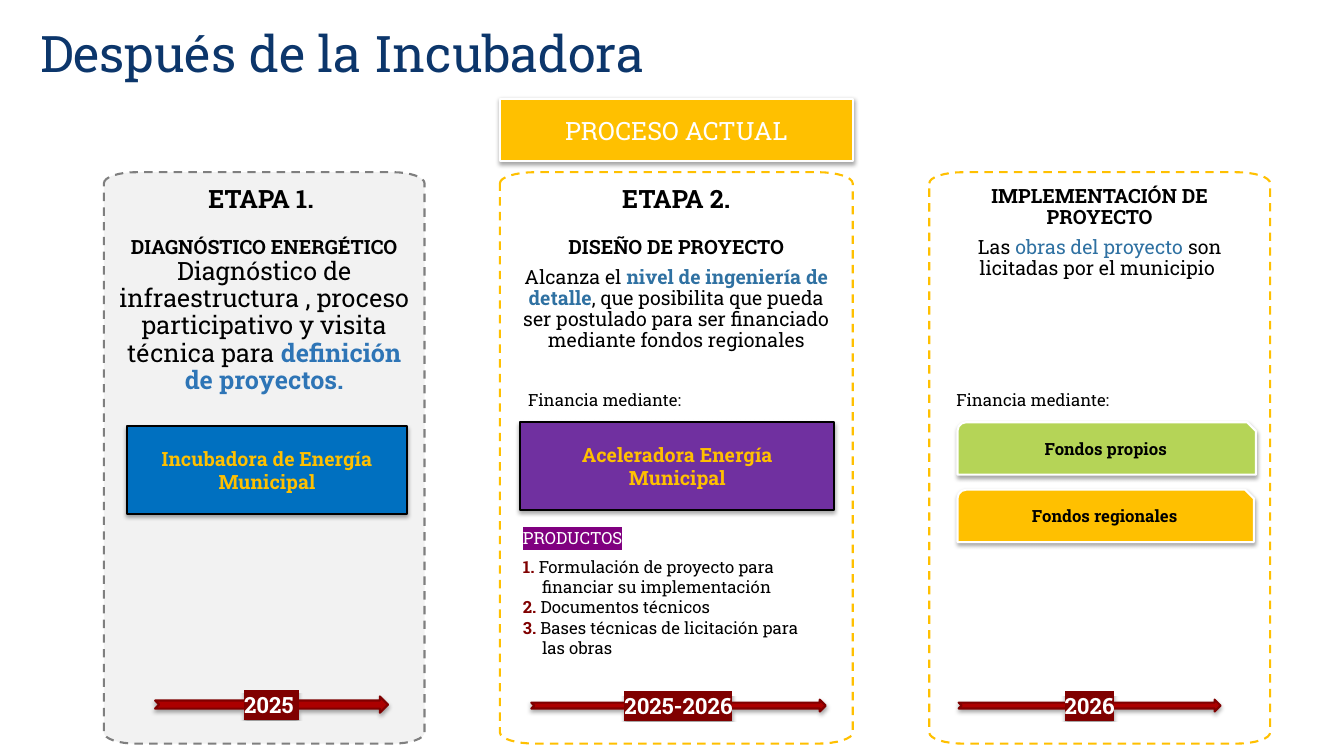
from dataclasses import dataclass
from math import cos, pi, sin

from lxml.etree import SubElement
from pptx import Presentation
from pptx.dml.color import RGBColor as RGB
from pptx.enum.dml import MSO_LINE as Dash
from pptx.enum.shapes import MSO_SHAPE as Kind
from pptx.enum.text import MSO_ANCHOR as Anchor, PP_ALIGN as Align
from pptx.oxml.ns import qn
from pptx.util import Cm, Pt


@dataclass(frozen=True)
class Theme:
    font: str = "Roboto Slab"
    navy: str = "0C366B"
    black: str = "000000"
    white: str = "FFFFFF"
    gold: str = "FFC000"
    gray: str = "7F7F7F"
    pale: str = "F2F2F2"
    sky: str = "2E75B6"
    steel: str = "2F71A2"
    blue: str = "0070C0"
    violet: str = "7030A0"
    purple: str = "800080"
    lime: str = "B5D457"
    red: str = "AC0000"
    maroon: str = "800000"
    title: int = 36
    head: int = 18
    year: int = 16
    body: int = 14
    note: int = 12
    line: float = 1.5


T = Theme()
TOP, TALL = 4.34, 14.4  # stage panels
GAP = 17  # points between a stage number and its name


@dataclass
class Para:
    """Runs are (text, colour, bold); hang is a hanging indent in cm."""
    runs: list
    size: int
    align: int = Align.LEFT
    before: int = 0
    space: float = 1.0
    hang: float = 0
    mark: str = ""


def center(text, size, color=T.black, bold=True, **more):
    return Para([(text, color, bold)], size, Align.CENTER, **more)


def mark_run(run, color):
    """Highlight a run; the element must follow its solid fill."""
    props = run.font._element
    mark = SubElement(props, qn("a:highlight"))
    SubElement(mark, qn("a:srgbClr"), val=color)
    props.find(qn("a:solidFill")).addnext(mark)


def write(shape, paras, inset, anchor=Anchor.TOP):
    frame = shape.text_frame
    frame.word_wrap = True
    frame.vertical_anchor = anchor
    side, edge = inset
    frame.margin_left = frame.margin_right = Cm(side)
    frame.margin_top = frame.margin_bottom = Cm(edge)
    for i, para in enumerate(paras):
        item = frame.add_paragraph() if i else frame.paragraphs[0]
        item.alignment = para.align
        item.line_spacing = para.space
        item.space_before = Pt(para.before)
        if para.hang:
            props = item._p.get_or_add_pPr()
            props.set("marL", str(Cm(para.hang)))
            props.set("indent", str(-Cm(para.hang)))
        for text, color, bold in para.runs:
            run = item.add_run()
            run.text = text
            font = run.font
            font.name, font.size, font.bold = T.font, Pt(para.size), bold
            font.color.rgb = RGB.from_string(color)
            if para.mark:
                mark_run(run, para.mark)


def paint(shape, fill, line):
    shape.shadow.inherit = False
    if fill:
        shape.fill.solid()
        shape.fill.fore_color.rgb = RGB.from_string(fill)
    else:
        shape.fill.background()
    shape.line.color.rgb = RGB.from_string(line)
    shape.line.width = Pt(T.line)


def drop_shade(shape):
    """Cast a soft shadow straight down."""
    effects = shape._element.spPr.find(qn("a:effectLst"))
    shade = SubElement(effects, qn("a:outerShdw"), blurRad=str(Pt(3.1)),
                       dist=str(Pt(1.8)), dir="5400000", rotWithShape="0")
    color = SubElement(shade, qn("a:srgbClr"), val=T.black)
    SubElement(color, qn("a:alpha"), val="35000")


def add_title(slide, text):
    title = slide.shapes.title
    title.left, title.top, title.width, title.height = map(
        Cm, (0.76, 0.43, 25.17, 1.8))
    write(title, [Para([(text, T.navy, False)], T.title)], (0.25, 0.13))


def add_panel(slide, left, width, line, paras, fill=None):
    """Draw a dashed panel with flat elliptic corners."""
    rx, ry, steps = width / 10, 0.28, 8
    right, base = left + width - rx, TOP + TALL - ry
    hubs = [(left + rx, TOP + ry), (right, TOP + ry),
            (right, base), (left + rx, base)]
    points = []
    for i, (x, y) in enumerate(hubs):
        for step in range(steps + 1):
            turn = pi + (i + step / steps) * pi / 2
            points.append((Cm(x + rx * cos(turn)), Cm(y + ry * sin(turn))))
    pen = slide.shapes.build_freeform(*points[0])
    pen.add_line_segments(points[1:], close=True)
    panel = pen.convert_to_shape()
    paint(panel, fill, line)
    panel.line.dash_style = Dash.DASH
    write(panel, paras, (0.36, 0.36))


def add_block(slide, kind, box, fill, line, para):
    block = slide.shapes.add_shape(kind, *map(Cm, box))
    paint(block, fill, line)
    drop_shade(block)
    write(block, [para], (0.33, 0.33), Anchor.MIDDLE)


def add_note(slide, box, paras):
    note = slide.shapes.add_textbox(*map(Cm, box))
    write(note, paras, (0.25, 0.13))


def add_stages(slide):
    tight = {"space": 0.9}
    add_panel(slide, 2.62, 8.08, T.gray, [
        center("ETAPA 1. ", T.head, **tight),
        center("DIAGNÓSTICO ENERGÉTICO", T.body, before=GAP, **tight),
        Para([("Diagnóstico de infraestructura , proceso participativo "
               "y visita técnica para ", T.black, False),
              ("definición de proyectos.", T.sky, True)],
             T.head, Align.CENTER, **tight)], T.pale)
    add_panel(slide, 12.6, 8.89, T.gold, [
        center("ETAPA 2.", T.head, **tight),
        center("DISEÑO DE PROYECTO", T.body, before=GAP, **tight),
        Para([("Alcanza el ", T.black, False),
              ("nivel de ingeniería de detalle", T.steel, True),
              (", que posibilita que pueda ser postulado para ser "
               "financiado mediante fondos regionales", T.black, False)],
             T.body, Align.CENTER, 6, **tight)])
    add_panel(slide, 23.42, 8.59, T.gold, [
        center("IMPLEMENTACIÓN DE PROYECTO", T.body, **tight),
        Para([("Las ", T.black, False),
              ("obras del proyecto ", T.steel, False),
              ("son licitadas por el municipio ", T.black, False)],
             T.body, Align.CENTER, 6, **tight)])


def add_funds(slide):
    for left in (13.06, 23.85):
        add_note(slide, (left, 9.68, 5.87, 0.76),
                 [Para([("Financia mediante:", T.black, False)], T.note)])
    for text, box, fill in (
            ("Incubadora de Energía Municipal",
             (3.2, 10.74, 7.06, 2.21), T.blue),
            ("Aceleradora Energía Municipal",
             (13.11, 10.64, 7.92, 2.21), T.violet)):
        add_block(slide, Kind.RECTANGLE, box, fill, T.black,
                  center(text, T.body, T.gold))
    for text, top, width, fill in (
            ("Fondos propios", 10.64, 7.52, T.lime),
            ("Fondos regionales", 12.34, 7.47, T.gold)):
        add_block(slide, Kind.SNIP_ROUND_RECTANGLE, (24.13, top, width, 1.32),
                  fill, T.white, center(text, T.note, space=0.9))


def add_goods(slide):
    goods = ("Formulación de proyecto para financiar su implementación",
             "Documentos técnicos",
             "Bases técnicas de licitación para las obras")
    paras = [Para([("PRODUCTOS", T.white, False)], T.note, mark=T.purple)]
    for i, text in enumerate(goods, 1):
        paras.append(Para([(f"{i}. ", T.maroon, True), (text, T.black, False)],
                          T.note, before=6 if i == 1 else 0, hang=0.48))
    add_note(slide, (12.93, 13.18, 7.7, 3.56), paras)


def add_years(slide):
    for text, box in (("2025 ", (3.91, 17.55, 5.87, 0.41)),
                      ("2025-2026", (13.39, 17.63, 7.42, 0.3)),
                      ("2026", (24.16, 17.63, 6.6, 0.3))):
        add_block(slide, Kind.NOTCHED_RIGHT_ARROW, box, T.red, T.maroon,
                  center(text, T.year, T.white, mark=T.maroon))


def main():
    deck = Presentation()
    deck.slide_width, deck.slide_height = Cm(33.87), Cm(19.05)
    slide = deck.slides.add_slide(deck.slide_layouts[5])
    add_title(slide, "Después de la Incubadora")
    add_stages(slide)
    add_funds(slide)
    add_goods(slide)
    add_years(slide)
    add_block(slide, Kind.RECTANGLE, (12.6, 2.49, 8.89, 1.57), T.gold, T.white,
              center("PROCESO ACTUAL", T.head, T.white, False))
    deck.save("out.pptx")


if __name__ == "__main__":
    main()
